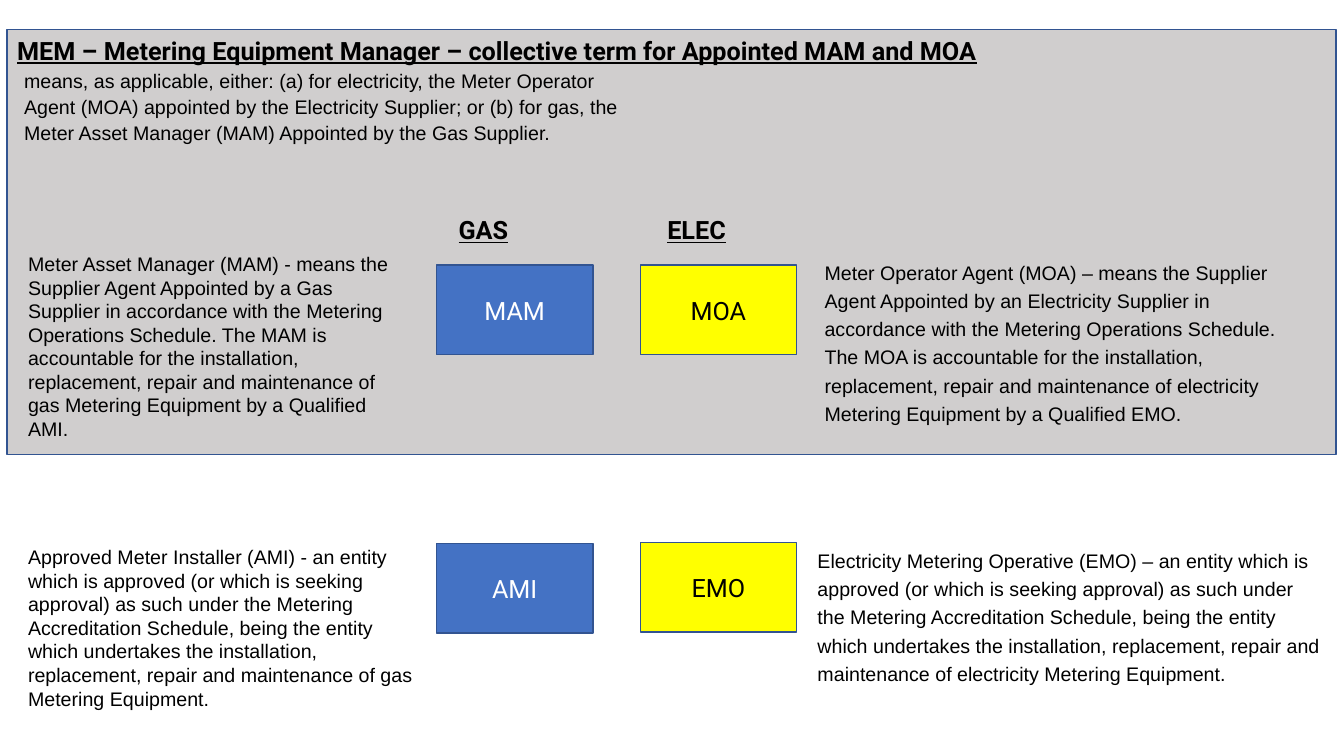
from pptx import Presentation
from pptx.dml.color import RGBColor
from pptx.enum.shapes import MSO_SHAPE
from pptx.enum.text import MSO_ANCHOR, MSO_AUTO_SIZE, PP_ALIGN
from pptx.util import Inches, Pt

RECTANGLE = MSO_SHAPE.RECTANGLE
TOP, MIDDLE = MSO_ANCHOR.TOP, MSO_ANCHOR.MIDDLE
LEFT, CENTER = PP_ALIGN.LEFT, PP_ALIGN.CENTER
NO_FIT = MSO_AUTO_SIZE.NONE

BLACK = RGBColor(0x00, 0x00, 0x00)
WHITE = RGBColor(0xFF, 0xFF, 0xFF)
GREY = RGBColor(0xD0, 0xCE, 0xCE)
BLUE = RGBColor(0x44, 0x72, 0xC4)
YELLOW = RGBColor(0xFF, 0xFF, 0x00)
OUTLINE = RGBColor(0x32, 0x54, 0x91)

prs = Presentation()
prs.slide_width, prs.slide_height = Inches(13.33), Inches(7.5)
slide = prs.slides.add_slide(prs.slide_layouts[5])
shapes = slide.shapes


def add_box(left, top, width, height, fill):
    box = shapes.add_shape(RECTANGLE, Inches(left), Inches(top), Inches(width), Inches(height))
    box.shadow.inherit = False
    box.fill.solid()
    box.fill.fore_color.rgb = fill
    box.line.color.rgb = OUTLINE
    box.line.width = Pt(1)
    return box


def write(holder, text, size, font, color=BLACK, heading=False,
          spacing=1.0, align=LEFT, anchor=TOP):
    frame = holder.text_frame
    frame.word_wrap = True
    frame.auto_size = NO_FIT
    frame.vertical_anchor = anchor
    paragraph = frame.paragraphs[0]
    paragraph.alignment = align
    paragraph.line_spacing = spacing
    run = paragraph.add_run()
    run.text = text
    run.font.size = Pt(size)
    run.font.name = font
    run.font.color.rgb = color
    run.font.bold = run.font.underline = heading


# Grey panel for the collective term, placed behind the title
panel = add_box(0.07, 0.29, 13.18, 4.22, GREY)
shapes.title._element.addprevious(panel._element)

# Title
title = shapes.title
title.left, title.top = Inches(0.07), Inches(0.3)
title.width, title.height = Inches(10.48), Inches(0.4)
write(title, "MEM – Metering Equipment Manager – collective term for Appointed MAM and MOA",
      18, "Roboto", heading=True)

# Definitions: left, top, width, height, line spacing, wording
definitions = [
    (0.14, 0.61, 6.22, 0.86, 1.1,
     "means, as applicable, either: (a) for electricity, the Meter Operator Agent (MOA) "
     "appointed by the Electricity Supplier; or (b) for gas, the Meter Asset Manager (MAM) "
     "Appointed by the Gas Supplier."),
    (0.18, 2.45, 3.95, 1.99, 1.0,
     "Meter Asset Manager (MAM) - means the Supplier Agent Appointed by a Gas Supplier in "
     "accordance with the Metering Operations Schedule. The MAM is accountable for the "
     "installation, replacement, repair and maintenance of gas Metering Equipment by a "
     "Qualified AMI."),
    (8.08, 2.49, 4.99, 1.77, 1.2,
     "Meter Operator Agent (MOA) – means the Supplier Agent Appointed by an Electricity "
     "Supplier in accordance with the Metering Operations Schedule. The MOA is accountable "
     "for the installation, replacement, repair and maintenance of electricity Metering "
     "Equipment by a Qualified EMO."),
    (0.18, 5.36, 4.03, 1.75, 1.0,
     "Approved Meter Installer (AMI) - an entity which is approved (or which is seeking "
     "approval) as such under the Metering Accreditation Schedule, being the entity which "
     "undertakes the installation, replacement, repair and maintenance of gas Metering "
     "Equipment."),
    (8.01, 5.35, 5.24, 1.49, 1.2,
     "Electricity Metering Operative (EMO) – an entity which is approved (or which is seeking "
     "approval) as such under the Metering Accreditation Schedule, being the entity which "
     "undertakes the installation, replacement, repair and maintenance of electricity "
     "Metering Equipment."),
]
for left, top, width, height, spacing, wording in definitions:
    definition = shapes.add_textbox(Inches(left), Inches(top), Inches(width), Inches(height))
    write(definition, wording, 14, "Arial", spacing=spacing)

# Gas and electricity columns: heading, its left, box left, fill, text colour, roles
fuels = [
    ("GAS", 4.45, 4.33, BLUE, WHITE, [("MAM", 2.63), ("AMI", 5.39)]),
    ("ELEC", 6.52, 6.35, YELLOW, BLACK, [("MOA", 2.63), ("EMO", 5.38)]),
]
for fuel, heading_left, box_left, fill, color, roles in fuels:
    fuel_heading = shapes.add_textbox(Inches(heading_left), Inches(2.08), Inches(1.88), Inches(0.4))
    write(fuel_heading, fuel, 18, "Roboto", heading=True)
    for role, top in roles:
        role_box = add_box(box_left, top, 1.55, 0.89, fill)
        write(role_box, role, 18, "Roboto", color, align=CENTER, anchor=MIDDLE)

prs.save("out.pptx")
